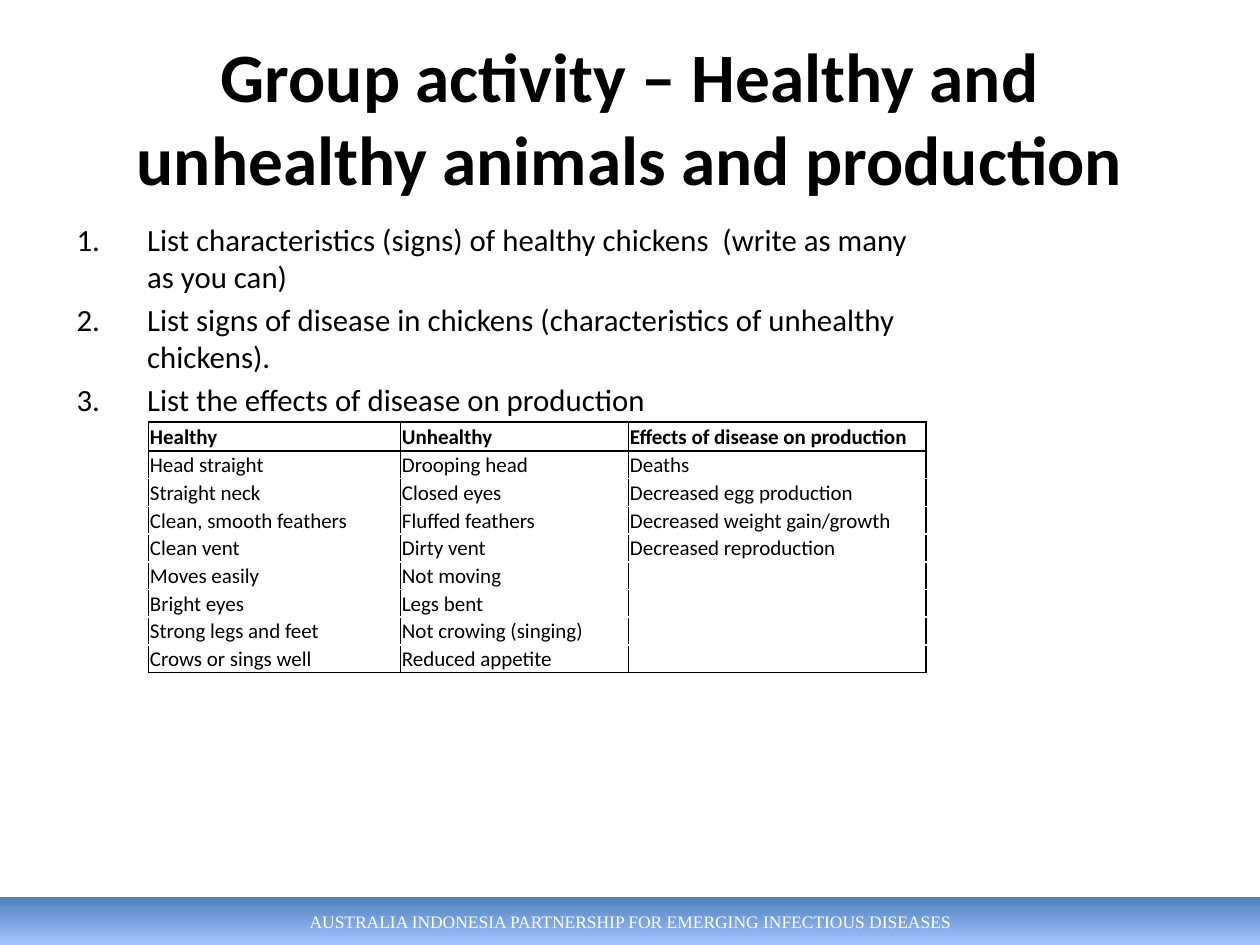
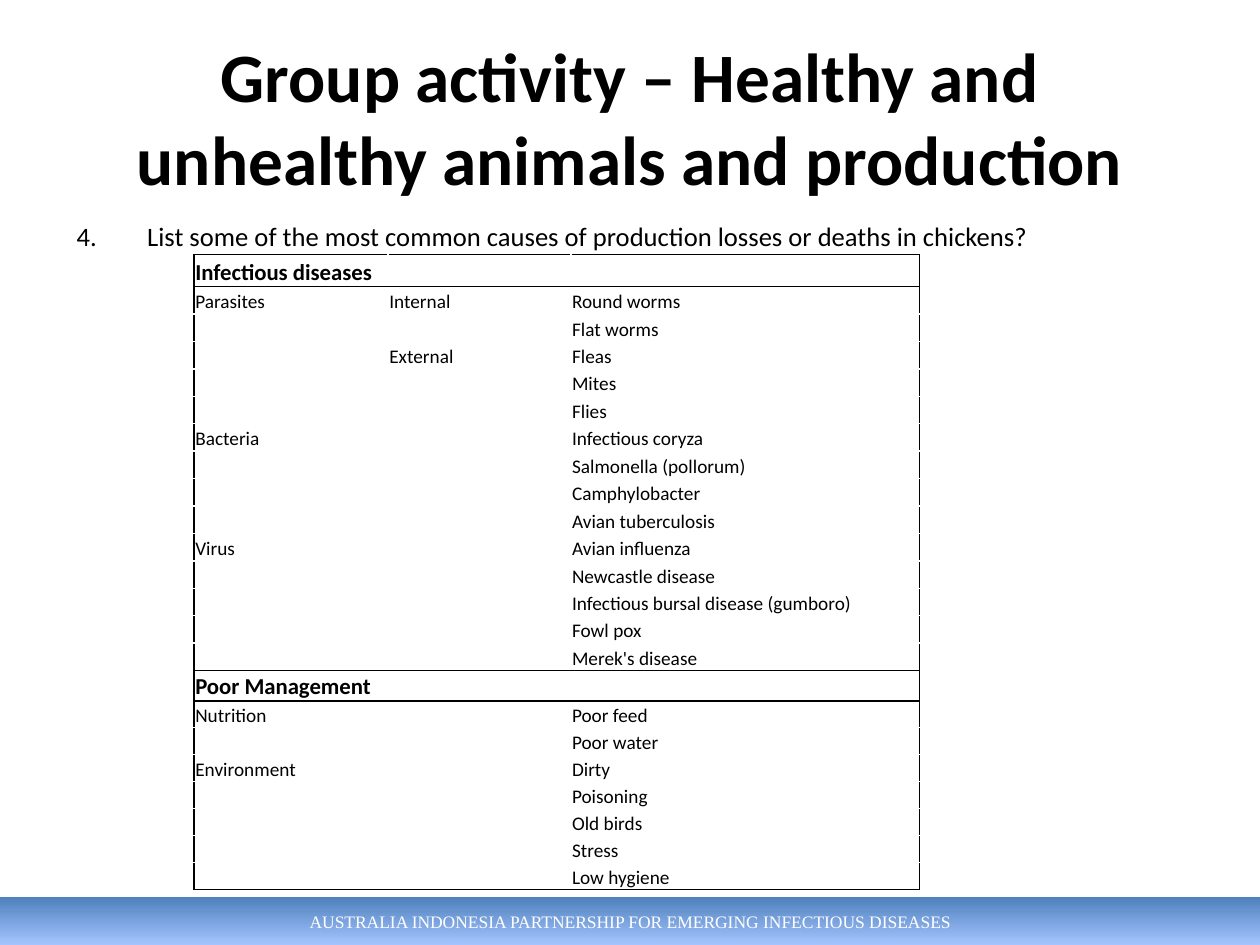
from lxml import etree
from pptx import Presentation
from pptx import util as u
from pptx.dml.color import RGBColor
from pptx.enum import shapes, text
from pptx.oxml import ns

# Grid of square cells: 100 columns by 75 rows
COLS, ROWS = 100, 75
CELL = u.Inches(0.1)

BLACK = RGBColor(0, 0, 0)
WHITE = RGBColor(255, 255, 255)
BAND_TOP = RGBColor(0x4F, 0x81, 0xBD)
BAND_BOTTOM = RGBColor(0xA4, 0xC4, 0xFF)

# Text formats
TITLE = dict(name="Calibri", size=39.6, bold=True, color=BLACK)
BODY = dict(name="Calibri", size=17.6, bold=False, color=BLACK)
FOOTER = dict(name="Times New Roman", size=10, bold=False, color=WHITE)

# Regions: left, top, width, height in grid cells
TITLE_BOX = (5, 3, 90, 12.5)
FOOTER_BOX = (0, 71.2, COLS, 3.8)

TITLE_TEXT = "Group activity – Healthy and unhealthy animals and production"
FOOTER_TEXT = "AUSTRALIA INDONESIA PARTNERSHIP FOR EMERGING INFECTIOUS DISEASES"

TASKS = [
    "List characteristics (signs) of healthy chickens  (write as many as you can)",
    "List signs of disease in chickens (characteristics of unhealthy chickens).",
    "List the effects of disease on production",
]
CAUSE_TASK = ["List some of the most common causes of production losses or deaths in chickens?"]

# Table sections: heading cells, heading height, row height, rows
SIGNS = [
    (("Healthy", "Unhealthy", "Effects of disease on production"), 2.3, 2.2, [
        ("Head straight", "Drooping head", "Deaths"),
        ("Straight neck", "Closed eyes", "Decreased egg production"),
        ("Clean, smooth feathers", "Fluffed feathers", "Decreased weight gain/growth"),
        ("Clean vent", "Dirty vent", "Decreased reproduction"),
        ("Moves easily", "Not moving", ""),
        ("Bright eyes", "Legs bent", ""),
        ("Strong legs and feet", "Not crowing (singing)", ""),
        ("Crows or sings well", "Reduced appetite", ""),
    ]),
]
CAUSES = [
    (("Infectious diseases", "", ""), 2.54, 2.18, [
        ("Parasites", "Internal", "Round worms"),
        ("", "", "Flat worms"),
        ("", "External", "Fleas"),
        ("", "", "Mites"),
        ("", "", "Flies"),
        ("Bacteria", "", "Infectious coryza"),
        ("", "", "Salmonella (pollorum)"),
        ("", "", "Camphylobacter"),
        ("", "", "Avian tuberculosis"),
        ("Virus", "", "Avian influenza"),
        ("", "", "Newcastle disease"),
        ("", "", "Infectious bursal disease (gumboro)"),
        ("", "", "Fowl pox"),
        ("", "", "Merek's disease"),
    ]),
    (("Poor Management", "", ""), 2.4, 2.14, [
        ("Nutrition", "", "Poor feed"),
        ("", "", "Poor water"),
        ("Environment", "", "Dirty"),
        ("", "", "Poisoning"),
        ("", "", "Old birds"),
        ("", "", "Stress"),
        ("", "", "Low hygiene"),
    ]),
]


def grid(*cells):
    return [u.Emu(round(c * CELL)) for c in cells]


def add_run(p, words, fmt):
    r = p.add_run()
    r.text = words
    for key, value in fmt.items():
        if key == "color":
            r.font.color.rgb = value
        else:
            setattr(r.font, key, u.Pt(value) if key == "size" else value)


def add_title(slide, box):
    tf = slide.shapes.add_textbox(*grid(*box)).text_frame
    tf.word_wrap = True
    tf.vertical_anchor = text.MSO_ANCHOR.MIDDLE
    p = tf.paragraphs[0]
    p.alignment = text.PP_ALIGN.CENTER
    add_run(p, TITLE_TEXT, TITLE)


def add_footer(slide, box):
    sp = slide.shapes.add_shape(shapes.MSO_SHAPE.RECTANGLE, *grid(*box))
    sp.shadow.inherit = False
    sp.line.fill.background()
    sp.fill.gradient()
    sp.fill.gradient_angle = 270
    for stop, color in zip(sp.fill.gradient_stops, (BAND_TOP, BAND_BOTTOM)):
        stop.color.rgb = color
    tf = sp.text_frame
    tf.vertical_anchor = text.MSO_ANCHOR.MIDDLE
    p = tf.paragraphs[0]
    p.alignment = text.PP_ALIGN.CENTER
    add_run(p, FOOTER_TEXT, FOOTER)


def add_tasks(slide, box, tasks, start, size):
    """Numbered list with a hanging indent."""
    tf = slide.shapes.add_textbox(*grid(*box)).text_frame
    tf.word_wrap = True
    indent = u.Inches(0.56)
    for i, task in enumerate(tasks):
        p = tf.add_paragraph() if i else tf.paragraphs[0]
        if i:
            p.space_before = u.Pt(size * 0.2)
        pPr = p._p.get_or_add_pPr()
        pPr.set("marL", str(indent))
        pPr.set("indent", str(-indent))
        etree.SubElement(pPr, ns.qn("a:buAutoNum"), type="arabicPeriod", startAt=str(start))
        add_run(p, task, BODY | {"size": size})


def set_borders(cell, sides):
    """Draw one-point lines; sides maps L, R, T, B to whether the line is black."""
    tcPr = cell._tc.get_or_add_tcPr()
    for side, black in sides.items():
        ln = etree.SubElement(tcPr, ns.qn("a:ln" + side), w=str(u.Pt(1)))
        fill = etree.SubElement(ln, ns.qn("a:solidFill"))
        etree.SubElement(fill, ns.qn("a:srgbClr"), val=str(BLACK if black else WHITE))


def fill_cell(cell, words, fmt, anchor):
    cell.fill.solid()
    cell.fill.fore_color.rgb = WHITE
    cell.vertical_anchor = anchor
    for side in ("left", "right", "top"):
        setattr(cell, "margin_" + side, u.Inches(0.01))
    cell.margin_bottom = 0
    p = cell.text_frame.paragraphs[0]
    if words:
        add_run(p, words, fmt)
    else:  # keeps an empty row as low as the others
        etree.SubElement(p._p, ns.qn("a:endParaRPr"), sz=str(fmt["size"] * 100))


def add_grid_table(slide, origin, widths, sections, sizes, anchor, inner_lines):
    """Sections of rows under ruled headings; sizes are (heading, row) points."""
    lines = []
    for heading, heading_height, row_height, rows in sections:
        lines.append((heading, heading_height, True))
        lines += [(row, row_height, False) for row in rows]
    heads = {i for i, line in enumerate(lines) if line[2]}
    last_row, last_col = len(lines) - 1, len(widths) - 1

    box = grid(*origin, sum(widths), sum(line[1] for line in lines))
    table = slide.shapes.add_table(len(lines), len(widths), *box).table
    table.first_row = table.horz_banding = False
    for column, width in zip(table.columns, grid(*widths)):
        column.width = width
    for i, (words, height, is_head) in enumerate(lines):
        table.rows[i].height = grid(height)[0]
        fmt = BODY | {"size": sizes[0] if is_head else sizes[1], "bold": is_head}
        for j, word in enumerate(words):
            cell = table.cell(i, j)
            set_borders(cell, {
                "L": inner_lines or j == 0,
                "R": inner_lines or j == last_col,
                "T": bool(heads & {i, i - 1}),
                "B": i == last_row or bool(heads & {i, i + 1}),
            })
            fill_cell(cell, word, fmt, anchor)


def add_base(prs):
    slide = prs.slides.add_slide(prs.slide_layouts[6])
    add_footer(slide, FOOTER_BOX)
    add_title(slide, TITLE_BOX)
    return slide


def build_signs(prs):
    slide = add_base(prs)
    add_tasks(slide, (5.1, 17, 70.1, 15), TASKS, 1, 17.6)
    add_grid_table(slide, (11.8, 33.5), (20, 18.1, 23.6), SIGNS, (12, 12),
                   text.MSO_ANCHOR.MIDDLE, True)


def build_causes(prs):
    slide = add_base(prs)
    add_tasks(slide, (5.1, 17, 88.2, 5.5), CAUSE_TASK, 4, 15.2)
    add_grid_table(slide, (15.4, 20.2), (15.4, 14.5, 27.7), CAUSES, (13, 11),
                   text.MSO_ANCHOR.BOTTOM, False)


def main():
    prs = Presentation()
    prs.slide_width, prs.slide_height = grid(COLS, ROWS)
    build_signs(prs)
    build_causes(prs)
    prs.save("out.pptx")


if __name__ == "__main__":
    main()
